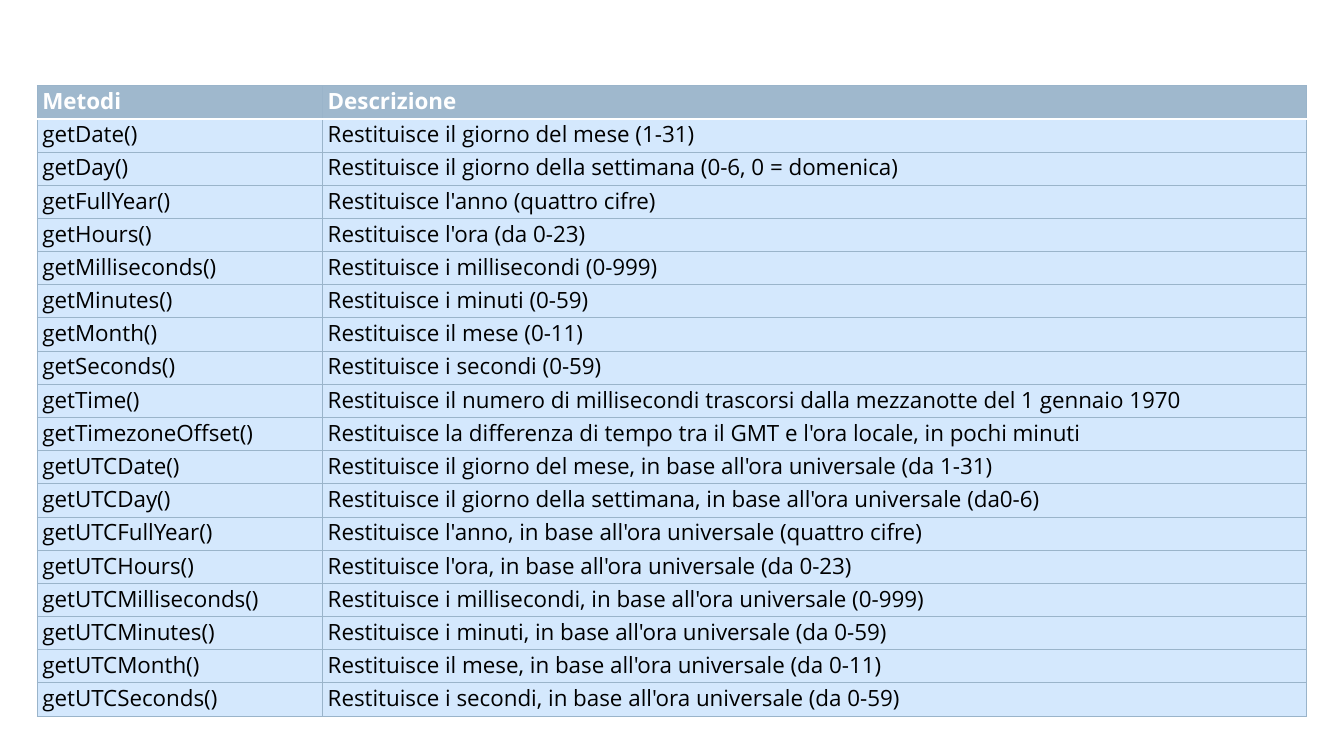
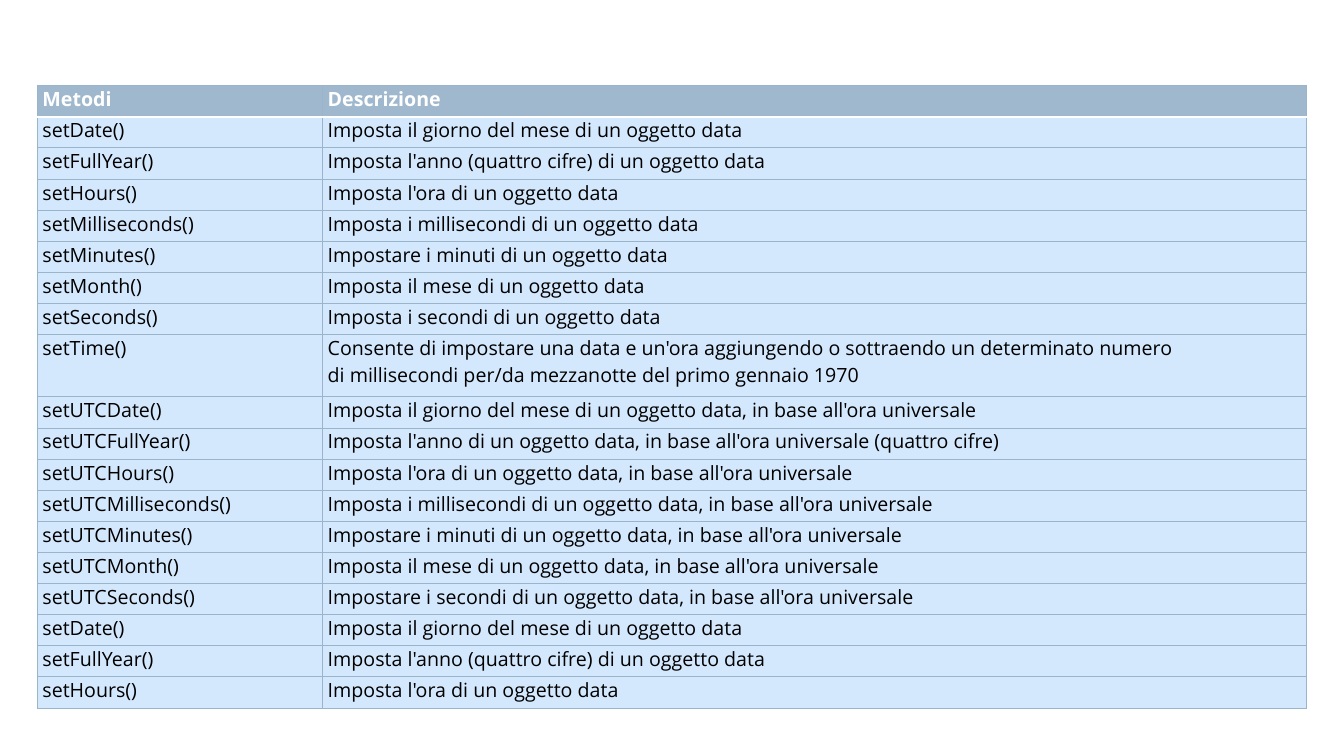
"""Build two reference slides listing the Date getter and setter methods."""
from dataclasses import dataclass

from lxml.etree import SubElement
from pptx import Presentation
from pptx.dml.color import RGBColor as Rgb
from pptx.enum.text import MSO_ANCHOR as Anchor
from pptx.oxml.ns import qn
from pptx.util import Pt

COLORS = {
    "header": "9FB8CD",
    "body": "D4E8FD",
    "grid": "9AB4CA",
    "white": "FFFFFF",
    "text": "000000",
}
FONT = "Open Sans"
LEFT, TOP = 26.7, 61.2
COLUMN_WIDTHS = (203.8, 702.8)
SIDE_INSET = 3.6
GRID_WIDTH, HEADER_RULE_WIDTH = 0.75, 2
NBSP = chr(160)
UTC = ", in base all'ora universale"


@dataclass(frozen=True)
class Method:
    name: str
    description: str
    lines: int = 1


@dataclass(frozen=True)
class MethodPage:
    methods: tuple[Method, ...]
    font_size: float
    row_height: float


HEADER = Method("Metodi", "Descrizione")

GETTERS = (
    Method("getDate()", "Restituisce il giorno del mese (1-31)"),
    Method("getDay()", "Restituisce il giorno della settimana (0-6, 0 = domenica)"),
    Method("getFullYear()", "Restituisce l'anno (quattro cifre)"),
    Method("getHours()", "Restituisce l'ora (da 0-23)"),
    Method("getMilliseconds()", "Restituisce i millisecondi (0-999)"),
    Method("getMinutes()", "Restituisce i minuti (0-59)"),
    Method("getMonth()", "Restituisce il mese (0-11)"),
    Method("getSeconds()", "Restituisce i secondi (0-59)"),
    Method("getTime()", "Restituisce il numero di millisecondi trascorsi "
           "dalla mezzanotte del 1 gennaio 1970"),
    Method("getTimezoneOffset()", "Restituisce la differenza di tempo tra il GMT "
           "e l'ora locale, in pochi minuti"),
    Method("getUTCDate()", f"Restituisce il giorno del mese{UTC} (da 1-31)"),
    Method("getUTCDay()", f"Restituisce il giorno della settimana{UTC} (da0-6)"),
    Method("getUTCFullYear()", f"Restituisce l'anno{UTC} (quattro cifre)"),
    Method("getUTCHours()", f"Restituisce l'ora{UTC} (da 0-23)"),
    Method("getUTCMilliseconds()", f"Restituisce i millisecondi{UTC} (0-999)"),
    Method("getUTCMinutes()", f"Restituisce i minuti{UTC} (da 0-59)"),
    Method("getUTCMonth()", f"Restituisce il mese{UTC} (da 0-11)"),
    Method("getUTCSeconds()", f"Restituisce i secondi{UTC} (da 0-59)"),
)

REPEATED_SETTERS = (
    Method("setDate()", "Imposta il giorno del mese di un oggetto data"),
    Method("setFullYear()", "Imposta l'anno (quattro cifre) di un oggetto data"),
    Method("setHours()", "Imposta l'ora di un oggetto data"),
)

SETTERS = (
    *REPEATED_SETTERS,
    Method("setMilliseconds()", "Imposta i millisecondi di un oggetto data"),
    Method("setMinutes()", "Impostare i minuti di un oggetto data"),
    Method("setMonth()", "Imposta il mese di un oggetto data"),
    Method("setSeconds()", "Imposta i secondi di un oggetto data"),
    Method("setTime()", "Consente di impostare una data e un'ora aggiungendo o "
           f"sottraendo un determinato numero di{NBSP}millisecondi per/da "
           "mezzanotte del primo gennaio 1970", lines=2),
    Method("setUTCDate()", f"Imposta il giorno del mese di un oggetto data{UTC}"),
    Method("setUTCFullYear()",
           f"Imposta l'anno di un oggetto data{UTC} (quattro cifre)"),
    Method("setUTCHours()", f"Imposta l'ora di un oggetto data{UTC}"),
    Method("setUTCMilliseconds()", f"Imposta i millisecondi di un oggetto data{UTC}"),
    Method("setUTCMinutes()", f"Impostare i minuti di un oggetto data{UTC}"),
    Method("setUTCMonth()", f"Imposta il mese di un oggetto data{UTC}"),
    Method("setUTCSeconds()", f"Impostare i secondi di un oggetto data{UTC}"),
    *REPEATED_SETTERS,
)

PAGES = (
    MethodPage(GETTERS, font_size=16, row_height=23.72),
    MethodPage(SETTERS, font_size=14, row_height=22.25),
)


def add_border(cell, side: str, color: str, width: float) -> None:
    line = SubElement(cell._tc.get_or_add_tcPr(), qn(f"a:ln{side}"), w=str(Pt(width)))
    fill = SubElement(line, qn("a:solidFill"))
    SubElement(fill, qn("a:srgbClr"), val=COLORS[color])


def fill_cell(cell, text: str, row: int, font_size: float) -> None:
    is_header = row == 0
    white_side = {0: "B", 1: "T"}.get(row)
    for side in "LRTB":
        if side == white_side:
            add_border(cell, side, "white", HEADER_RULE_WIDTH)
        else:
            add_border(cell, side, "grid", GRID_WIDTH)
    cell.fill.solid()
    cell.fill.fore_color.rgb = Rgb.from_string(COLORS["header" if is_header else "body"])
    cell.margin_left = cell.margin_right = Pt(SIDE_INSET)
    cell.margin_top = cell.margin_bottom = Pt(0)
    cell.vertical_anchor = Anchor.TOP
    run = cell.text_frame.paragraphs[0].add_run()
    run.text = text
    run.font.name = FONT
    run.font.size = Pt(font_size)
    run.font.bold = is_header
    run.font.color.rgb = Rgb.from_string(COLORS["white" if is_header else "text"])


def add_method_page(deck, page: MethodPage) -> None:
    slide = deck.slides.add_slide(deck.slide_layouts[6])
    entries = (HEADER, *page.methods)
    height = page.row_height * sum(entry.lines for entry in entries)
    methods = slide.shapes.add_table(
        len(entries), len(COLUMN_WIDTHS),
        Pt(LEFT), Pt(TOP), Pt(sum(COLUMN_WIDTHS)), Pt(height),
    ).table
    methods.horz_banding = False
    for column, width in zip(methods.columns, COLUMN_WIDTHS):
        column.width = Pt(width)
    for row, entry in enumerate(entries):
        methods.rows[row].height = Pt(page.row_height * entry.lines)
        for column, text in enumerate((entry.name, entry.description)):
            fill_cell(methods.cell(row, column), text, row, page.font_size)


def main() -> None:
    deck = Presentation()
    deck.slide_width, deck.slide_height = Pt(960), Pt(540)
    for page in PAGES:
        add_method_page(deck, page)
    deck.save("out.pptx")


if __name__ == "__main__":
    main()
